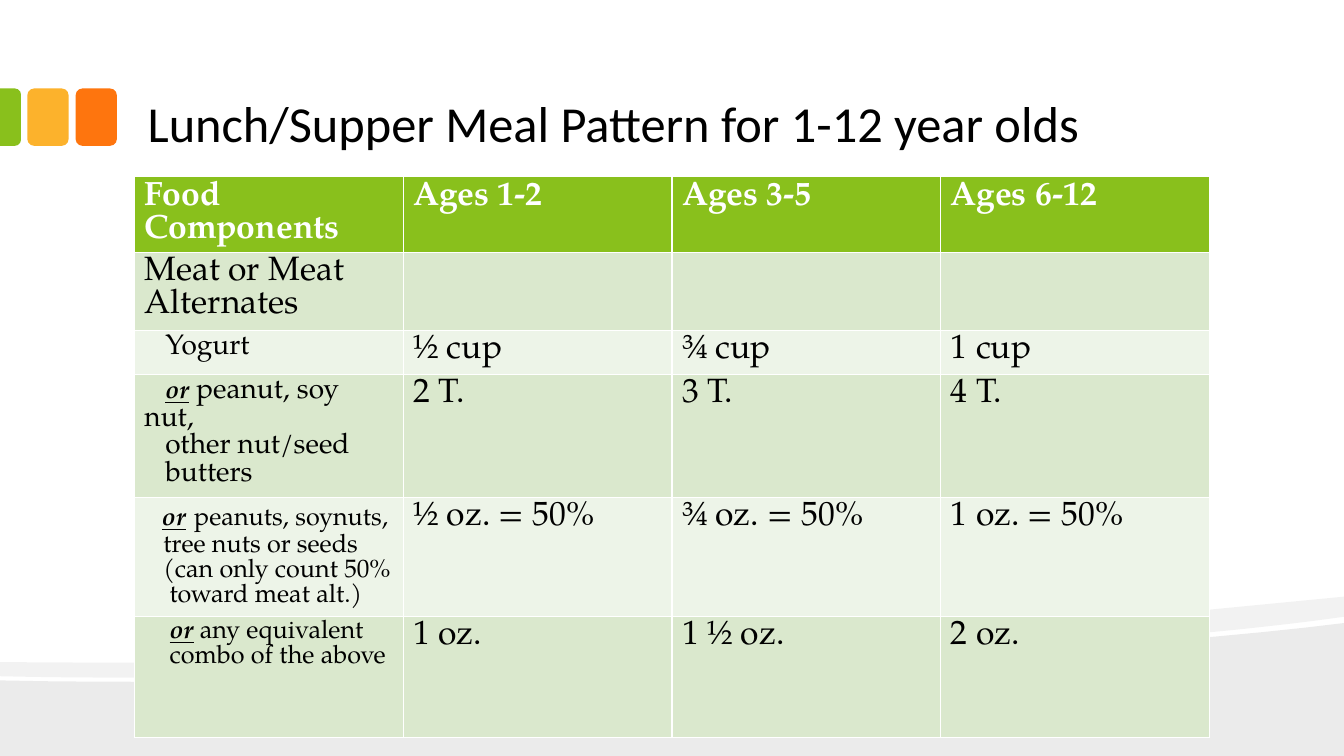
from dataclasses import dataclass
from pptx import Presentation
from pptx.dml.color import RGBColor as RGB
from pptx.enum.shapes import MSO_SHAPE as Shape
from pptx.enum.text import MSO_ANCHOR as Anchor, MSO_AUTO_SIZE as Fit, PP_ALIGN as Align
from pptx.oxml.ns import qn
from pptx.util import Pt
from lxml.etree import SubElement as Sub


@dataclass(frozen=True)
class Theme:
    green: str = "89C01C"
    gold: str = "FCB22C"
    orange: str = "FE750E"
    dark: str = "DAE8CD"
    pale: str = "EDF4E8"
    ink: str = "000000"
    white: str = "FFFFFF"
    head: str = "Calibri"
    body: str = "TeX Gyre Pagella"
    title: int = 36
    big: int = 24
    mid: int = 20
    small: int = 18
    lead: float = 0.98


T = Theme()
HEAD = ["Food Components", "Ages 1-2", "Ages 3-5", "Ages 6-12"]
HIGH = [53.6, 55.7, 31.4, 87.9, 85, 86.4]
OR = ("or", T.small, True)
FOODS = [
    ([(0, [("Meat or Meat Alternates", T.big)])], ["", "", ""]),
    ([(15, [("Yogurt", T.mid)])], ["½ cup", "¾ cup", "1 cup"]),
    ([(15, [OR, (" peanut, soy nut,", T.mid)]),
      (15, [("other nut/seed", T.mid)]),
      (15, [("butters", T.mid)])], ["2 T.", "3 T.", "4 T."]),
    ([(12.5, [OR, (" ", T.big), ("peanuts, soynuts,", T.small)]),
      (13.5, [("tree nuts or seeds", T.small)]),
      (13.5, [("(can only count 50%", T.small)]),
      (18, [("toward meat alt.)", T.small)])],
     ["½ oz. = 50%", "¾ oz. = 50%", "1 oz. = 50%"]),
    ([(18, [OR, (" any equivalent", T.small)]),
      (18, [("combo of the above", T.small)])], ["1 oz.", "1 ½ oz.", "2 oz."]),
]
HILL = [(960, 445), [(960, 540)], [(0, 540)], [(0, 486)],
        [(253.4, 491.8), (750.2, 471.6), (960, 445)]]
BAND = [(960, 426.2), [(960, 440.6)],
        [(903.6, 448.6), (827.3, 455.8), (740.9, 461.5)],
        [(502.6, 477.4), (185.8, 487.4), (0, 483.1)], [(0, 473)],
        [(469.4, 476.6), (699.1, 451.4), (960, 426.2)]]


def trace(outline, steps=24):
    spots = [outline[0]]
    for leg in outline[1:]:
        if len(leg) == 1:
            spots += leg
            continue
        curve = [spots[-1], *leg]
        for i in range(1, steps + 1):
            t = i / steps
            parts = [(1 - t) ** 3, 3 * t * (1 - t) ** 2, 3 * t * t * (1 - t), t ** 3]
            spots.append(tuple(sum(w * p[k] for w, p in zip(parts, curve)) for k in (0, 1)))
    return [(Pt(x), Pt(y)) for x, y in spots]


class Deck:
    def __init__(self, theme):
        self.theme = theme
        self.prs = Presentation()
        self.prs.slide_width, self.prs.slide_height = Pt(960), Pt(540)
        self.slide = self.prs.slides.add_slide(self.prs.slide_layouts[5])

    def paint(self, shape, color):
        shape.shadow.inherit = False
        shape.fill.solid()
        shape.fill.fore_color.rgb = RGB.from_string(color)
        shape.line.fill.background()
        return shape

    def font(self, run, name, size, color, bold=False):
        font = run.font
        font.name, font.size, font.bold = name, Pt(size), bold
        font.color.rgb = RGB.from_string(color)

    def wave(self, outline, alpha):
        first, *rest = trace(outline)
        path = self.slide.shapes.build_freeform(*first, scale=1.0)
        path.add_line_segments(rest, close=True)
        shape = self.paint(path.convert_to_shape(), self.theme.ink)
        tint = shape.fill._xPr.find(qn("a:solidFill"))[0]
        Sub(tint, qn("a:alpha"), val=str(alpha * 1000))

    def block(self, kind, color, left, top, wide, high, turn=0):
        box = map(Pt, (left, top, wide, high))
        shape = self.paint(self.slide.shapes.add_shape(kind, *box), color)
        shape.rotation = turn
        return shape

    def title(self, text):
        th, shape = self.theme, self.slide.shapes.title
        shape.left, shape.top, shape.width, shape.height = map(Pt, (96, 12.2, 768, 102.2))
        frame = shape.text_frame
        frame.text = text
        frame.word_wrap, frame.auto_size = True, Fit.NONE
        frame.vertical_anchor = Anchor.BOTTOM
        frame.margin_left = frame.margin_right = Pt(9.4)
        frame.margin_top = frame.margin_bottom = Pt(5)
        para = frame.paragraphs[0]
        para.alignment, para.line_spacing = Align.LEFT, 0.9
        self.font(para.runs[0], th.head, th.title, th.ink)

    def cell(self, cell, paras, fill, color, bold=False):
        th = self.theme
        cell.fill.solid()
        cell.fill.fore_color.rgb = RGB.from_string(fill)
        frame = cell.text_frame
        for i, (indent, runs) in enumerate(paras):
            para = frame.add_paragraph() if i else frame.paragraphs[0]
            para.line_spacing = Pt(th.lead * max(r[1] for r in runs))
            para._p.get_or_add_pPr().set("indent", str(Pt(indent)))
            for text, size, *mark in runs:
                run = para.add_run()
                run.text = text
                self.font(run, th.body, size, color, bold or bool(mark))
                if mark:
                    run.font.italic = run.font.underline = True

    def table(self, head, foods, highs):
        th = self.theme
        frame = self.slide.shapes.add_table(
            len(highs), len(head), Pt(96), Pt(126), Pt(768), Pt(sum(highs)))
        grid = frame.table
        for row, high in zip(grid.rows, highs):
            row.height = Pt(high)
        for c, text in enumerate(head):
            self.cell(grid.cell(0, c), [(0, [(text, th.big)])], th.green, th.white, True)
        for r, (food, sizes) in enumerate(foods, 1):
            fill = th.dark if r % 2 else th.pale
            cells = [food] + [[(0, [(text, th.big)])] for text in sizes]
            for c, paras in enumerate(cells):
                self.cell(grid.cell(r, c), paras, fill, th.ink)


def main():
    deck = Deck(T)
    deck.wave(HILL, 8)
    deck.wave(BAND, 5)
    for left, color in ((54, T.orange), (19.5, T.gold)):
        deck.block(Shape.ROUNDED_RECTANGLE, color, left, 63.2, 29.5, 41)
    tab = deck.block(Shape.ROUND_2_SAME_RECTANGLE, T.green, -13, 76.2, 41, 15, 90)
    tab.adjustments[0] = 0.29
    deck.title("Lunch/Supper Meal Pattern for 1-12 year olds")
    deck.table(HEAD, FOODS, HIGH)
    deck.prs.save("out.pptx")


if __name__ == "__main__":
    main()
